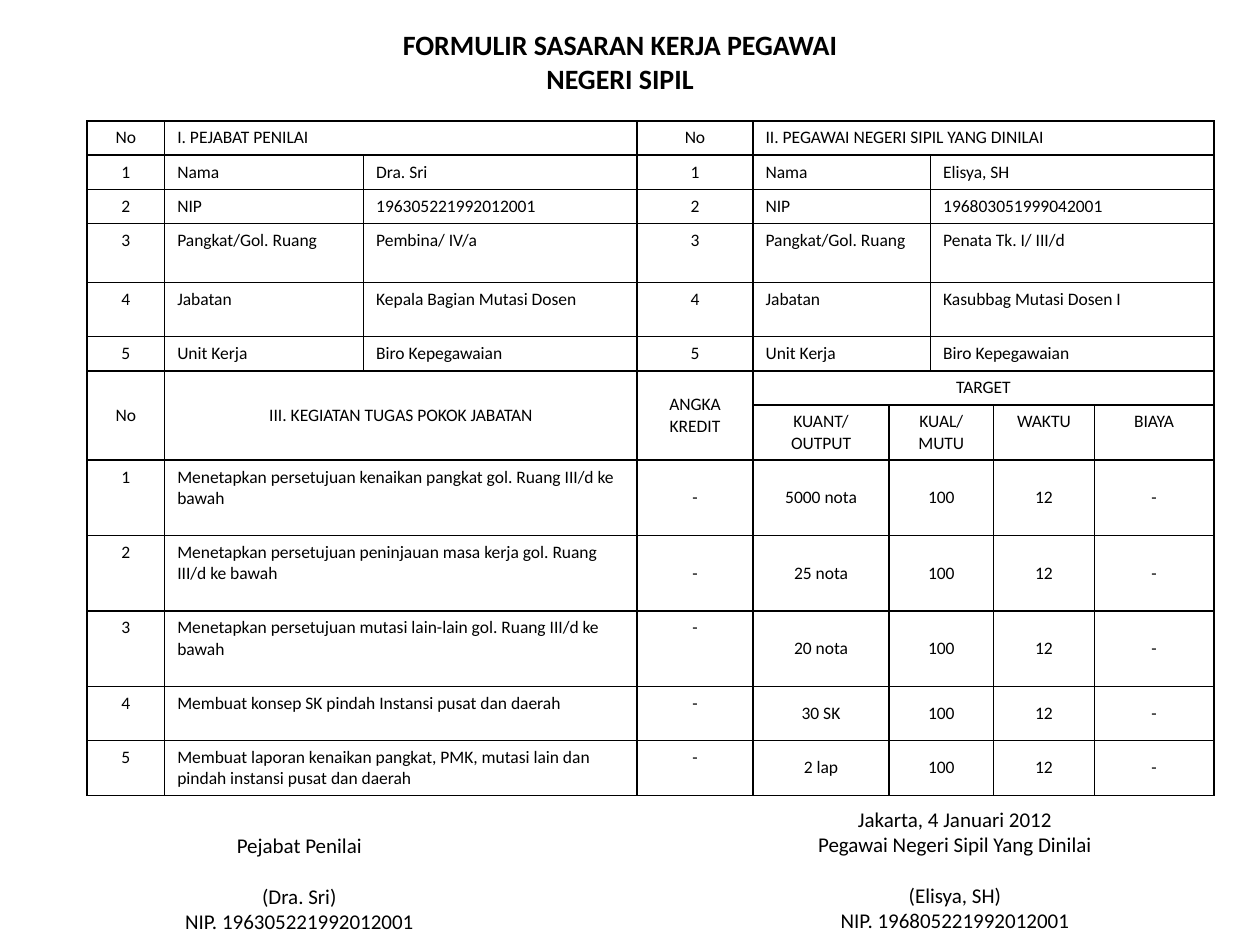
"""Build the civil servant performance target form as a one-slide deck."""
from lxml import etree
from pptx import Presentation
from pptx import util as u
from pptx.dml.color import RGBColor
from pptx.enum import text
from pptx.oxml import ns

BLACK = RGBColor(0x00, 0x00, 0x00)
FONT = "Calibri"
BORDER_WIDTH = u.Pt(1)


def write(frame, lines, size, centred=True, bold=False):
    for index, line in enumerate(lines):
        paragraph = frame.paragraphs[0] if index == 0 else frame.add_paragraph()
        paragraph.alignment = text.PP_ALIGN.CENTER if centred else text.PP_ALIGN.LEFT
        run = paragraph.add_run()
        run.text = line
        run.font.name = FONT
        run.font.size = u.Pt(size)
        run.font.bold = bold
        run.font.color.rgb = BLACK


def put(row, col, content, across=1, down=1, centred=True, middle=False):
    cell = form.cell(row, col)
    if across > 1 or down > 1:
        cell.merge(form.cell(row + down - 1, col + across - 1))
    cell.vertical_anchor = text.MSO_ANCHOR.MIDDLE if middle else text.MSO_ANCHOR.TOP
    write(cell.text_frame, content.split("\n"), 10, centred)


deck = Presentation()
deck.slide_width, deck.slide_height = u.Cm(25.4), u.Cm(19.05)
slide = deck.slides.add_slide(deck.slide_layouts[5])

heading = slide.shapes.title
heading.left, heading.top = u.Cm(7.42), u.Cm(0.43)
heading.width, heading.height = u.Cm(10.16), u.Cm(1.63)
heading.text_frame.auto_size = text.MSO_AUTO_SIZE.NONE
heading.text_frame.vertical_anchor = text.MSO_ANCHOR.TOP
write(heading.text_frame, ["FORMULIR SASARAN KERJA PEGAWAI NEGERI SIPIL"], 16, bold=True)

col_widths = [1.57, 4.01, 5.51, 2.34, 2.74, 0.84, 1.27, 2.03, 2.41]
row_heights = [0.69] * 3 + [1.19, 1.09] + [0.69] * 2 + [1.09] + [1.52] * 3 + [1.09] * 2
form = slide.shapes.add_table(
    len(row_heights), len(col_widths), u.Cm(1.75), u.Cm(2.44),
    u.Cm(sum(col_widths)), u.Cm(sum(row_heights))).table
form.first_row = form.horz_banding = False
for column, width in zip(form.columns, col_widths):
    column.width = u.Cm(width)
for row, height in zip(form.rows, row_heights):
    row.height = u.Cm(height)

put(0, 0, "No")
put(0, 1, "I. PEJABAT PENILAI", across=2, centred=False)
put(0, 3, "No")
put(0, 4, "II. PEGAWAI NEGERI SIPIL YANG DINILAI", across=5, centred=False)

identities = [
    ("Nama", "Dra. Sri", "Elisya, SH"),
    ("NIP", "196305221992012001", "196803051999042001"),
    ("Pangkat/Gol. Ruang", "Pembina/ IV/a", "Penata Tk. I/ III/d"),
    ("Jabatan", "Kepala Bagian Mutasi Dosen", "Kasubbag Mutasi Dosen I"),
    ("Unit Kerja", "Biro Kepegawaian", "Biro Kepegawaian"),
]
for number, (label, assessor, employee) in enumerate(identities, 1):
    put(number, 0, str(number))
    put(number, 1, label, centred=False)
    put(number, 2, assessor, centred=False)
    put(number, 3, str(number))
    put(number, 4, label, across=2, centred=False)
    put(number, 6, employee, across=3, centred=False)

put(6, 0, "No", down=2, middle=True)
put(6, 1, "III. KEGIATAN TUGAS POKOK JABATAN", across=2, down=2, middle=True)
put(6, 3, "ANGKA KREDIT", down=2, middle=True)
put(6, 4, "TARGET", across=5)
put(7, 4, "KUANT/\nOUTPUT")
put(7, 5, "KUAL/\nMUTU", across=2)
put(7, 7, "WAKTU")
put(7, 8, "BIAYA")

duties = [
    ("Menetapkan persetujuan kenaikan pangkat gol. Ruang III/d ke bawah", "5000 nota"),
    ("Menetapkan persetujuan peninjauan masa kerja gol. Ruang III/d ke bawah", "25 nota"),
    ("Menetapkan persetujuan mutasi lain-lain gol. Ruang III/d ke bawah", "20 nota"),
    ("Membuat konsep SK pindah Instansi pusat dan daerah", "30 SK"),
    ("Membuat laporan kenaikan pangkat, PMK, mutasi lain dan pindah instansi "
     "pusat dan daerah", "2 lap"),
]
for number, (duty, output) in enumerate(duties, 1):
    row = 7 + number
    put(row, 0, str(number))
    put(row, 1, duty, across=2, centred=False)
    put(row, 3, "-", middle=number <= 2)
    put(row, 4, output, middle=True)
    put(row, 5, "100", across=2, middle=True)
    put(row, 7, "12", middle=True)
    put(row, 8, "-", middle=True)

for cell in form.iter_cells():
    cell.fill.background()
    properties = cell._tc.get_or_add_tcPr()
    for position, side in enumerate(("lnL", "lnR", "lnT", "lnB")):
        border = etree.Element(ns.qn(f"a:{side}"), w=str(BORDER_WIDTH))
        solid = etree.SubElement(border, ns.qn("a:solidFill"))
        etree.SubElement(solid, ns.qn("a:srgbClr"), val=str(BLACK))
        properties.insert(position, border)

signatures = [
    (2.54, 16.66, 6.99, 2.82,
     ["Pejabat Penilai", "(Dra. Sri)", "NIP. 196305221992012001"]),
    (15.44, 16.13, 7.62, 3.33,
     ["Jakarta, 4 Januari 2012", "Pegawai Negeri Sipil Yang Dinilai",
      "(Elisya, SH)", "NIP. 196805221992012001"]),
]
for left, top, width, height, lines in signatures:
    signature = slide.shapes.add_textbox(u.Cm(left), u.Cm(top), u.Cm(width), u.Cm(height))
    signature.text_frame.word_wrap = True
    write(signature.text_frame, lines, 12)
    signature.text_frame.paragraphs[-2].space_before = u.Cm(0.52)

deck.save("out.pptx")
